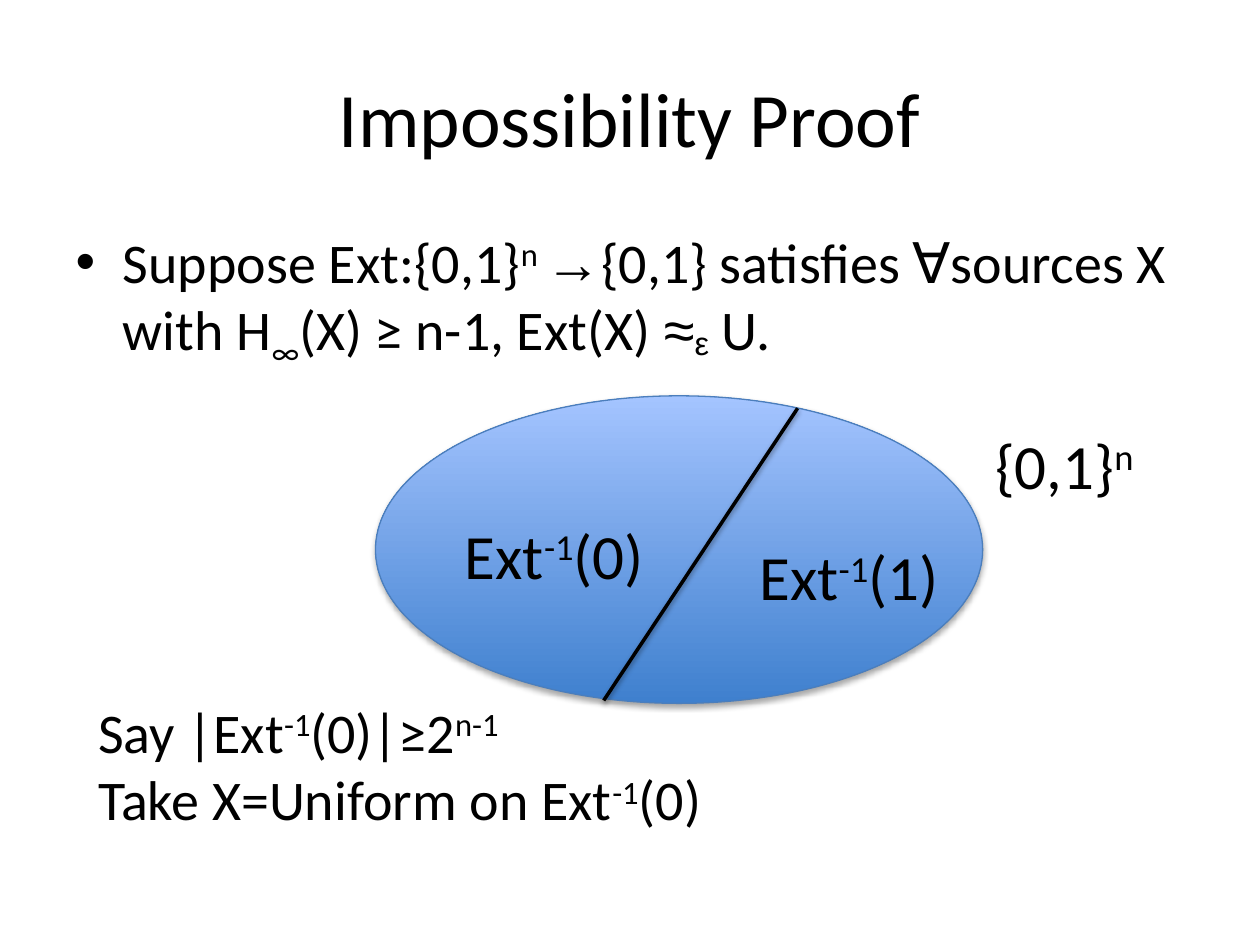
import lxml.etree
import pptx
import pptx.dml.color
import pptx.enum.shapes
import pptx.enum.text
import pptx.oxml.ns
import pptx.util

Cm = pptx.util.Cm
Pt = pptx.util.Pt
RGBColor = pptx.dml.color.RGBColor
Align = pptx.enum.text.PP_ALIGN
Anchor = pptx.enum.text.MSO_ANCHOR
AutoSize = pptx.enum.text.MSO_AUTO_SIZE

BLACK = RGBColor(0x00, 0x00, 0x00)
DEEP_BLUE = RGBColor(0x3F, 0x80, 0xCE)
PALE_BLUE = RGBColor(0xA4, 0xC4, 0xFF)
EDGE_BLUE = RGBColor(0x4B, 0x7E, 0xBC)

TEXT_FONT = "Calibri"
SYMBOL_FONT = "Arial"
SUPER = 30
INVERSE = ("-1", SUPER)


def set_values(target, values):
    for name, value in values.items():
        setattr(target, name, value)


def add_child(parent, tag, **attributes):
    return lxml.etree.SubElement(parent, pptx.oxml.ns.qn(tag), attributes)


class ProofSlide:
    def __init__(self, deck):
        self.page = deck.slides.add_slide(deck.slide_layouts[1])

    def add_span(self, para, size, text, baseline=0, font=TEXT_FONT):
        span = para.add_run()
        span.text = text
        set_values(span.font, {"name": font, "size": Pt(size)})
        span.font.color.rgb = BLACK
        if baseline:
            span.font._element.set("baseline", str(baseline * 1000))

    def fill_frame(self, frame, lines, size, align=Align.LEFT):
        """Each part of a line is plain text or (text, baseline percent[, font])."""
        for index, parts in enumerate(lines):
            para = frame.add_paragraph() if index else frame.paragraphs[0]
            para.alignment = align
            for part in parts:
                self.add_span(para, size, *([part] if isinstance(part, str) else part))

    def placeholder(self, holder, place, lines, size, align, anchor):
        set_values(holder, dict(zip(("left", "top", "width", "height"), map(Cm, place))))
        set_values(holder.text_frame, {"auto_size": AutoSize.NONE, "word_wrap": True,
                                       "vertical_anchor": anchor})
        self.fill_frame(holder.text_frame, lines, size, align)

    def title(self, place, text):
        self.placeholder(self.page.shapes.title, place, [[text]], 44, Align.CENTER, Anchor.MIDDLE)

    def body(self, place, lines):
        self.placeholder(self.page.placeholders[1], place, lines, 32, Align.LEFT, Anchor.TOP)

    def label(self, place, lines, size=36):
        box = self.page.shapes.add_textbox(*map(Cm, place))
        set_values(box.text_frame, {"word_wrap": False, "auto_size": AutoSize.SHAPE_TO_FIT_TEXT})
        self.fill_frame(box.text_frame, lines, size)

    def drop_shadow(self, shape, opacity, distance):
        effects = add_child(shape.element.spPr, "a:effectLst")
        shadow = add_child(effects, "a:outerShdw", blurRad=str(Pt(3.1)), dist=str(Pt(distance)),
                           dir="5400000", rotWithShape="0")
        color = add_child(shadow, "a:srgbClr", val=str(BLACK))
        add_child(color, "a:alpha", val=str(opacity * 1000))

    def ellipse(self, place):
        shape = self.page.shapes.add_shape(pptx.enum.shapes.MSO_SHAPE.OVAL, *map(Cm, place))
        shape.fill.gradient()
        shape.fill.gradient_angle = 90
        for stop, color, position in zip(shape.fill.gradient_stops, (DEEP_BLUE, PALE_BLUE), (0, 1)):
            stop.color.rgb = color
            stop.position = position
        shape.line.color.rgb = EDGE_BLUE
        shape.line.width = Pt(0.75)
        self.drop_shadow(shape, 35, 1.8)

    def line(self, start, end):
        connector = self.page.shapes.add_connector(
            pptx.enum.shapes.MSO_CONNECTOR.STRAIGHT, *map(Cm, start + end))
        connector.line.color.rgb = BLACK
        connector.line.width = Pt(2)
        self.drop_shadow(connector, 38, 1.6)


def main():
    deck = pptx.Presentation()
    set_values(deck, {"slide_width": Cm(25.4), "slide_height": Cm(19.05)})
    slide = ProofSlide(deck)

    slide.title((1.27, 0.76, 22.86, 3.18), "Impossibility Proof")
    slide.body((1.27, 4.45, 22.86, 12.57), [[
        "Suppose Ext:{0,1}", ("n ", SUPER), ("→", 0, SYMBOL_FONT),
        "{0,1} satisfies ∀sources X with H", ("∞", -25),
        "(X) ≥ n-1, Ext(X) ", ("≈", 0, SYMBOL_FONT), ("ε", -10, SYMBOL_FONT), " U."]])

    slide.ellipse((7.57, 7.98, 12.24, 6.2))
    slide.line((16.08, 8.23), (12.17, 14.12))
    for left, top, bit in ((9.12, 10.29, 0), (15.06, 10.72, 1)):
        slide.label((left, top, 4.22, 1.8), [["Ext", INVERSE, f"({bit})"]])
    slide.label((1.73, 13.94, 12.83, 3), [
        ["Say |Ext", INVERSE, "(0)|≥2", ("n-1", SUPER)],
        ["Take X=Uniform on Ext", INVERSE, "(0)"]], 32)
    slide.label((19.81, 8.48, 3.4, 1.8), [["{0,1}", ("n", SUPER)]])

    deck.save("out.pptx")


if __name__ == "__main__":
    main()
